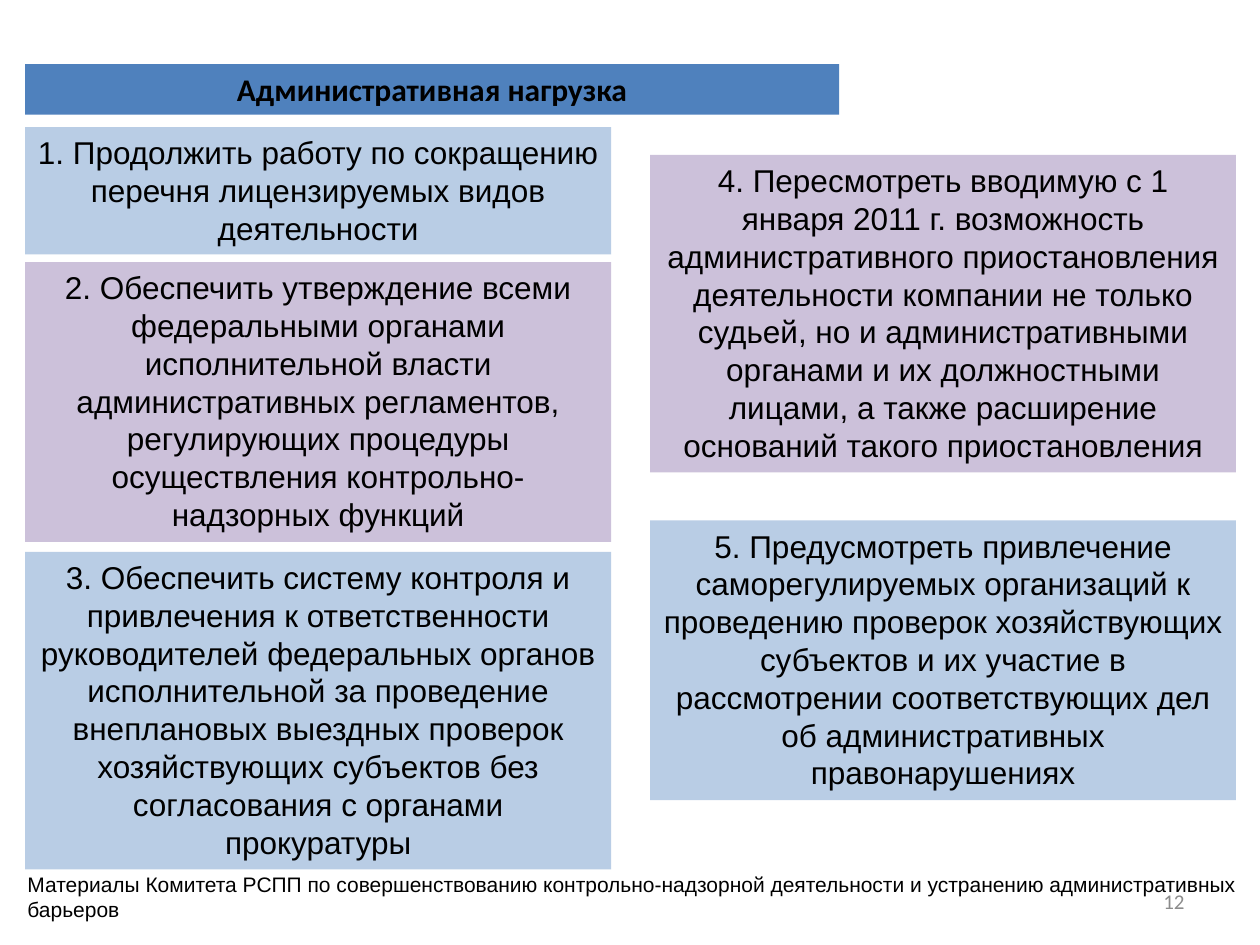
from dataclasses import dataclass

import pptx
import pptx.dml.color
import pptx.enum.shapes
import pptx.enum.text
import pptx.util

Inches = pptx.util.Inches
Align = pptx.enum.text.PP_ALIGN
Anchor = pptx.enum.text.MSO_ANCHOR


@dataclass(frozen=True)
class Theme:
    header: str = "4F81BD"
    blue: str = "B9CDE5"
    purple: str = "CCC1DA"
    text: str = "000000"
    muted: str = "8C8C8C"
    body_font: str = "Arial"
    heading_font: str = "Calibri"
    body_size: int = 18
    small_size: int = 12


THEME = Theme()
COLUMN_WIDTH = 4.65
LEFT_COLUMN = 0.2
RIGHT_COLUMN = 5.16

MEASURES = [
    (LEFT_COLUMN, 1.01, 1.01, THEME.blue,
     "1. Продолжить работу по сокращению перечня лицензируемых видов деятельности"),
    (LEFT_COLUMN, 2.08, 2.22, THEME.purple,
     "2. Обеспечить утверждение всеми федеральными органами исполнительной власти "
     "административных регламентов, регулирующих процедуры осуществления "
     "контрольно-надзорных функций"),
    (LEFT_COLUMN, 4.38, 2.52, THEME.blue,
     "3. Обеспечить систему контроля и привлечения к ответственности руководителей "
     "федеральных органов исполнительной за проведение внеплановых выездных проверок "
     "хозяйствующих субъектов без согласования с органами прокуратуры"),
    (RIGHT_COLUMN, 1.23, 2.52, THEME.purple,
     "4. Пересмотреть вводимую с 1 января 2011 г. возможность административного "
     "приостановления деятельности компании не только судьей, но и административными "
     "органами и их должностными лицами, а также расширение оснований такого "
     "приостановления"),
    (RIGHT_COLUMN, 4.13, 2.22, THEME.blue,
     "5. Предусмотреть привлечение саморегулируемых организаций к проведению проверок "
     "хозяйствующих субъектов и их участие в рассмотрении соответствующих дел об "
     "административных правонарушениях"),
]


def apply_format(target, values):
    for name, value in values.items():
        setattr(target, name, value)


def write_text(shape, text, alignment, anchor=Anchor.TOP, color=THEME.text, **font):
    frame = shape.text_frame
    apply_format(frame, {"word_wrap": True, "vertical_anchor": anchor})
    paragraph = frame.paragraphs[0]
    paragraph.alignment = alignment
    run = paragraph.add_run()
    run.text = text
    apply_format(run.font, {name: pptx.util.Pt(value) if name == "size" else value
                            for name, value in font.items()})
    run.font.color.rgb = pptx.dml.color.RGBColor.from_string(color)


def add_panel(slide, box, fill, text, **font):
    shape = slide.shapes.add_shape(
        pptx.enum.shapes.MSO_SHAPE.RECTANGLE, *map(Inches, box))
    shape.shadow.inherit = False
    shape.fill.solid()
    shape.fill.fore_color.rgb = pptx.dml.color.RGBColor.from_string(fill)
    shape.line.fill.background()
    write_text(shape, text, Align.CENTER, size=THEME.body_size, **font)


def add_header(slide, box):
    add_panel(slide, box, THEME.header, "Административная нагрузка",
              name=THEME.heading_font, bold=True)


def add_measures(slide, measures):
    for left, top, height, fill, text in measures:
        add_panel(slide, (left, top, COLUMN_WIDTH, height), fill, text,
                  name=THEME.body_font)


def add_page_number(slide, box):
    shape = slide.shapes.add_textbox(*map(Inches, box))
    write_text(shape, "12", Align.RIGHT, Anchor.MIDDLE, THEME.muted,
               name=THEME.heading_font, size=THEME.small_size)


def add_source_note(slide, box):
    shape = slide.shapes.add_textbox(*map(Inches, box))
    write_text(shape, "Материалы Комитета РСПП по совершенствованию "
               "контрольно-надзорной деятельности и устранению административных барьеров",
               Align.LEFT, name=THEME.body_font, size=THEME.small_size)


def main():
    presentation = pptx.Presentation()
    apply_format(presentation, {"slide_width": Inches(10), "slide_height": Inches(7.5)})
    slide = presentation.slides.add_slide(presentation.slide_layouts[6])
    add_header(slide, (LEFT_COLUMN, 0.51, 6.46, 0.4))
    add_measures(slide, MEASURES)
    add_page_number(slide, (7.17, 6.95, 2.33, 0.4))
    add_source_note(slide, (0.12, 6.87, 9.8, 0.5))
    presentation.save("out.pptx")


if __name__ == "__main__":
    main()
